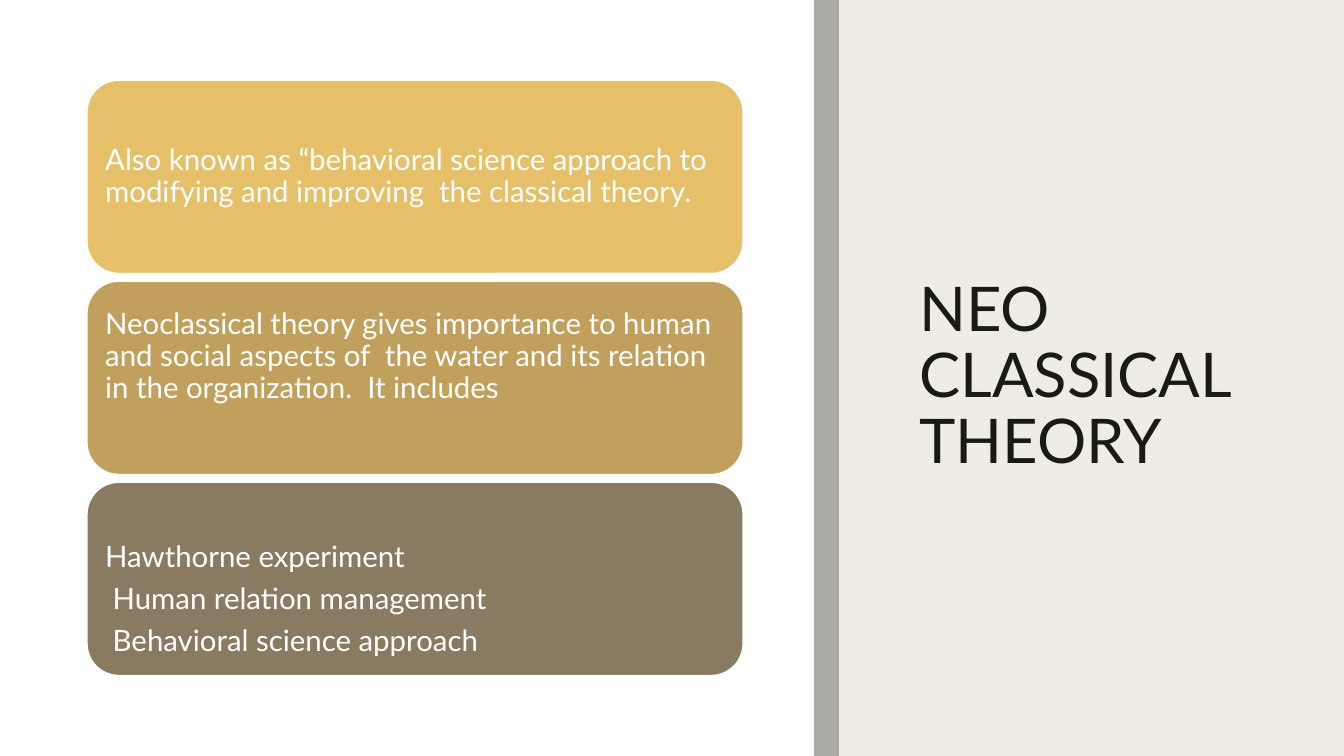
"""Build the Neo Classical Theory slide with three stacked text cards."""
from pptx import Presentation
from pptx.dml.color import RGBColor
from pptx.enum.shapes import MSO_SHAPE as Shape
from pptx.enum.text import MSO_ANCHOR as Anchor, MSO_AUTO_SIZE as AutoSize, PP_ALIGN as Align
from pptx.oxml.ns import qn
from pptx.util import Pt
from lxml.etree import SubElement

INK = RGBColor(0x19, 0x1B, 0x0E)
CREAM = RGBColor(0xEF, 0xED, 0xE3)
WHITE = RGBColor(0xFF, 0xFF, 0xFF)
GRAY = RGBColor(0x80, 0x80, 0x80)
GOLD = RGBColor(0xE6, 0xC0, 0x69)
OCHRE = RGBColor(0xC0, 0xA0, 0x5C)
TAUPE = RGBColor(0x89, 0x7B, 0x61)
FONT = "Lato"
CARD_TOP, CARD_STEP = 57, 143.6
EXTRA_INSET = 30


def add_block(kind, left, top, width, height, color):
    shape = slide.shapes.add_shape(kind, Pt(left), Pt(top), Pt(width), Pt(height))
    shape.shadow.inherit = False
    shape.fill.solid()
    shape.fill.fore_color.rgb = color
    shape.line.fill.background()
    return shape


def format_paragraph(paragraph, size, color, layout):
    for name, value in {"alignment": Align.LEFT, **layout}.items():
        setattr(paragraph, name, value)
    for name, value in {"name": FONT, "size": Pt(size)}.items():
        setattr(paragraph.font, name, value)
    paragraph.font.color.rgb = color


presentation = Presentation()
presentation.slide_width, presentation.slide_height = Pt(960), Pt(540)
slide = presentation.slides.add_slide(presentation.slide_layouts[5])
slide.background.fill.solid()
slide.background.fill.fore_color.rgb = CREAM

title = slide.shapes.title
title_format = {"left": Pt(649.5), "top": Pt(50.4), "width": Pt(260), "height": Pt(439.2)}
for name, value in title_format.items():
    setattr(title, name, value)
title.text_frame.text = "NEO CLASSICAL THEORY"
frame_format = {"word_wrap": True, "auto_size": AutoSize.NONE, "vertical_anchor": Anchor.MIDDLE}
for name, value in frame_format.items():
    setattr(title.text_frame, name, value)
format_paragraph(title.text_frame.paragraphs[0], 44, INK, {"line_spacing": 0.89})

add_block(Shape.RECTANGLE, 0, 0, 581.3, 540, WHITE)
divider = add_block(Shape.RECTANGLE, 581.3, 0, 18, 540, GRAY)
divider_color = divider.fill._xPr.find(qn("a:solidFill"))[0]
SubElement(divider_color, qn("a:alpha"), val="60000")

cards = [
    (GOLD, 0, 0, [
        "Also known as “behavioral science approach to modifying and improving  the classical theory.",
    ]),
    (OCHRE, 0, EXTRA_INSET, [
        "Neoclassical theory gives importance to human and social aspects of  the water "
        "and its relation in the organization.  It includes",
    ]),
    (TAUPE, EXTRA_INSET, 0, [
        "Hawthorne experiment",
        " Human relation management",
        " Behavioral science approach",
    ]),
]
for index, (color, inset_top, inset_bottom, lines) in enumerate(cards):
    card = add_block(Shape.ROUNDED_RECTANGLE, 61.9, CARD_TOP + index * CARD_STEP, 469.2, 138.6, color)
    card.line.color.rgb = WHITE
    card.line.width = Pt(1.5)
    frame = card.text_frame
    card_format = {
        **frame_format,
        "margin_left": Pt(6.5),
        "margin_right": Pt(6.5),
        "margin_top": Pt(inset_top),
        "margin_bottom": Pt(inset_bottom),
    }
    for name, value in card_format.items():
        setattr(frame, name, value)
    frame.text = "\n".join(lines)
    for paragraph in frame.paragraphs:
        format_paragraph(paragraph, 21, WHITE, {"line_spacing": 0.9, "space_after": Pt(7.35)})

presentation.save("out.pptx")
